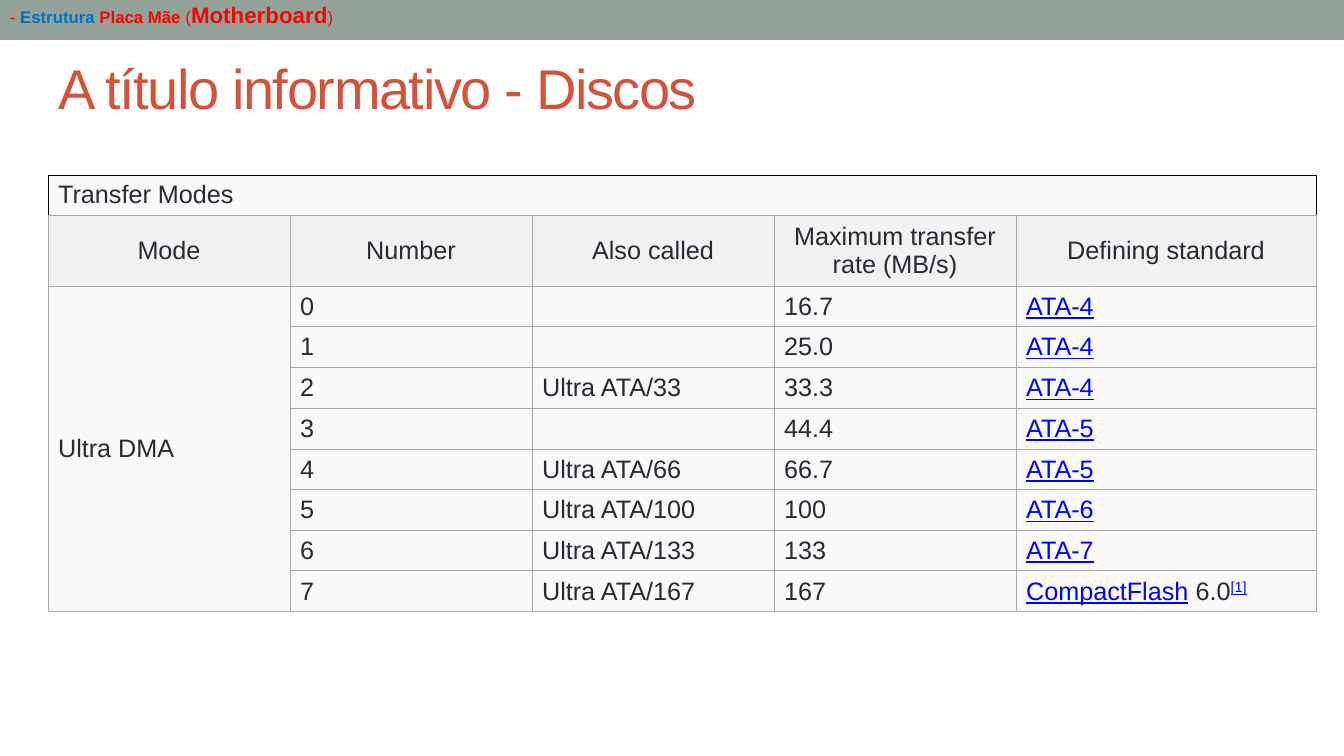
import dataclasses

import lxml.etree
import pptx
import pptx.dml.color
import pptx.enum.shapes
import pptx.enum.text
import pptx.oxml.ns
import pptx.util

PX = 914400 / 100.8
ALIGN = pptx.enum.text.PP_ALIGN
ANCHOR = pptx.enum.text.MSO_ANCHOR


@dataclasses.dataclass(frozen=True)
class Theme:
    font: str = "Arial"
    banner: str = "93A299"
    title: str = "D2533C"
    red: str = "FF0000"
    blue: str = "0070C0"
    text: str = "292934"
    link: str = "0000FF"
    header_fill: str = "F2F2F2"
    body_fill: str = "F9F9F9"
    grid: str = "AAAAAA"
    frame: str = "000000"
    title_size: int = 40
    table_size: int = 18
    topic_size: int = 12
    topic_large: int = 16
    border_width: float = 0.75


THEME = Theme()

HEADERS = ["Mode", "Number", "Also called", "Maximum transfer\nrate (MB/s)", "Defining standard"]
MODES = [
    ("", "16.7", "ATA-4"),
    ("", "25.0", "ATA-4"),
    ("Ultra ATA/33", "33.3", "ATA-4"),
    ("", "44.4", "ATA-5"),
    ("Ultra ATA/66", "66.7", "ATA-5"),
    ("Ultra ATA/100", "100", "ATA-6"),
    ("Ultra ATA/133", "133", "ATA-7"),
    ("Ultra ATA/167", "167", "CompactFlash"),
]
COLUMN_WIDTHS = [242, 242, 242, 242, 300]
ROW_HEIGHTS = [40, 71] + [40 + number % 2 for number in range(len(MODES))]


def px(length):
    return pptx.util.Emu(round(length * PX))


def box(left, top, width, height):
    return px(left), px(top), px(width), px(height)


def rgb(color):
    return pptx.dml.color.RGBColor.from_string(color)


def add_text(paragraph, text, size=THEME.table_size, color=THEME.text, bold=False,
             underline=False, spacing=None, baseline=None):
    for index, line in enumerate(text.split("\n")):
        if index:
            paragraph.add_line_break()
        run = paragraph.add_run()
        run.text = line
        font = run.font
        font.name, font.size = THEME.font, pptx.util.Pt(size)
        font.bold, font.underline = bold, underline
        font.color.rgb = rgb(color)
        properties = run._r.get_or_add_rPr()
        if spacing is not None:
            properties.set("spc", str(spacing))
        if baseline is not None:
            properties.set("baseline", str(baseline))


def add_banner(slide):
    banner = slide.shapes.add_shape(
        pptx.enum.shapes.MSO_SHAPE.RECTANGLE, *box(0, 0, 1344, 40))
    banner.shadow.inherit = False
    banner.fill.solid()
    banner.fill.fore_color.rgb = rgb(THEME.banner)
    banner.line.fill.background()
    slide.shapes.title.element.addprevious(banner.element)


def set_title(slide, text):
    title = slide.shapes.title
    title.left, title.top, title.width, title.height = box(48, 33, 1210, 109)
    frame = title.text_frame
    frame.auto_size = pptx.enum.text.MSO_AUTO_SIZE.NONE
    frame.vertical_anchor = ANCHOR.MIDDLE
    paragraph = frame.paragraphs[0]
    paragraph.alignment = ALIGN.LEFT
    add_text(paragraph, text, size=THEME.title_size, color=THEME.title, spacing=-100)


def add_topic(slide):
    frame = slide.shapes.add_textbox(*box(0, -4, 347, 37)).text_frame
    frame.word_wrap = False
    frame.auto_size = pptx.enum.text.MSO_AUTO_SIZE.SHAPE_TO_FIT_TEXT
    paragraph = frame.paragraphs[0]
    small, large = THEME.topic_size, THEME.topic_large
    for text, color, size, bold in [
        ("- ", THEME.red, small, False),
        ("Estrutura ", THEME.blue, small, True),
        ("Placa Mãe ", THEME.red, small, True),
        ("(", THEME.red, small, False),
        ("Motherboard", THEME.red, large, True),
        (")", THEME.red, small, False),
    ]:
        add_text(paragraph, text, size=size, color=color, bold=bold)


def set_borders(cell, color):
    properties = cell._tc.get_or_add_tcPr()
    name = pptx.oxml.ns.qn
    for index, side in enumerate(["a:lnL", "a:lnR", "a:lnT", "a:lnB"]):
        line = lxml.etree.Element(name(side), w=str(pptx.util.Pt(THEME.border_width)))
        fill = lxml.etree.SubElement(line, name("a:solidFill"))
        lxml.etree.SubElement(fill, name("a:srgbClr"), val=color)
        properties.insert(index, line)


def style_cell(cell, row):
    cell.vertical_anchor = ANCHOR.MIDDLE
    cell.fill.solid()
    cell.fill.fore_color.rgb = rgb(THEME.header_fill if row == 1 else THEME.body_fill)
    set_borders(cell, THEME.frame if row == 0 else THEME.grid)


def fill_cell(cell, text, alignment=ALIGN.LEFT, **text_format):
    paragraph = cell.text_frame.paragraphs[0]
    paragraph.alignment = alignment
    if text:
        add_text(paragraph, text, **text_format)
    return paragraph


def add_modes_table(slide):
    table = slide.shapes.add_table(
        len(ROW_HEIGHTS), len(COLUMN_WIDTHS),
        *box(48, 175, sum(COLUMN_WIDTHS), sum(ROW_HEIGHTS))).table
    table.first_row = table.horz_banding = False
    for column, width in zip(table.columns, COLUMN_WIDTHS):
        column.width = px(width)
    for index, (row, height) in enumerate(zip(table.rows, ROW_HEIGHTS)):
        row.height = px(height)
        for cell in row.cells:
            style_cell(cell, index)

    table.cell(0, 0).merge(table.cell(0, len(COLUMN_WIDTHS) - 1))
    table.cell(2, 0).merge(table.cell(len(ROW_HEIGHTS) - 1, 0))
    fill_cell(table.cell(0, 0), "Transfer Modes")
    fill_cell(table.cell(2, 0), "Ultra DMA")
    for column, header in enumerate(HEADERS):
        fill_cell(table.cell(1, column), header, alignment=ALIGN.CENTER)
    for number, (alias, rate, standard) in enumerate(MODES):
        row = number + 2
        for column, text in enumerate([str(number), alias, rate], start=1):
            fill_cell(table.cell(row, column), text)
        paragraph = fill_cell(table.cell(row, 4), standard, color=THEME.link, underline=True)
    add_text(paragraph, " 6.0")
    add_text(paragraph, "[1]", color=THEME.link, underline=True, baseline=30000)


def main():
    presentation = pptx.Presentation()
    presentation.slide_width, presentation.slide_height = px(1344), px(756)
    slide = presentation.slides.add_slide(presentation.slide_layouts[5])
    add_banner(slide)
    set_title(slide, "A título informativo - Discos")
    add_topic(slide)
    add_modes_table(slide)
    presentation.save("out.pptx")


if __name__ == "__main__":
    main()
